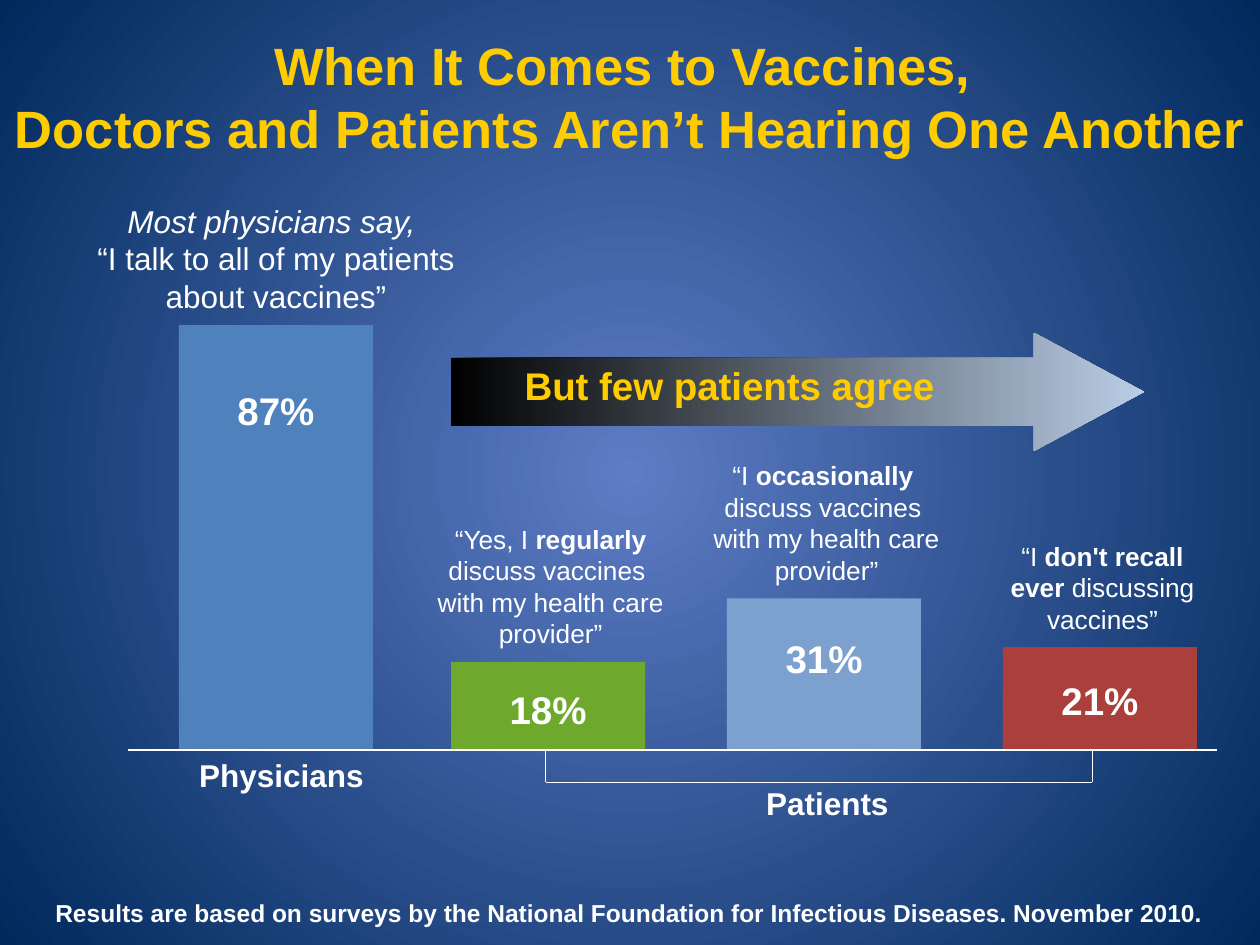
import pptx
import pptx.dml.color
import pptx.enum.shapes
import pptx.enum.text
import pptx.oxml.ns
import pptx.oxml.xmlchemy
import pptx.util
from pptx.util import Inches

COLORS = {
    "glow": "5E7CC5",
    "navy": "00295C",
    "gold": "FFCC00",
    "white": "FFFFFF",
    "black": "000000",
    "ice": "B9CDE5",
    "physicians": "4F81BD",
    "regularly": "6EA92D",
    "occasionally": "7CA1CE",
    "never": "AA3F3C",
}
ALIGN = pptx.enum.text.PP_ALIGN
SHAPES = pptx.enum.shapes.MSO_SHAPE
BAR_WIDTH = 1.54
BAR_PITCH = 2.19
INCHES_PER_PERCENT = 3.37 / 87


def rgb(name):
    return pptx.dml.color.RGBColor.from_string(COLORS[name])


def apply_format(target, values):
    for attribute, value in values.items():
        setattr(target, attribute, value)


def add_text(slide, box, lines, size, color="white", align=ALIGN.CENTER, frame_format=None, **font_format):
    frame = slide.shapes.add_textbox(*map(Inches, box)).text_frame
    apply_format(frame, {"word_wrap": True, **(frame_format or {})})
    paragraph = frame.paragraphs[0]
    paragraph.alignment = align
    for number, line in enumerate(lines):
        if number:
            paragraph.add_line_break()
        for piece in line:
            words, emphasis = piece if isinstance(piece, tuple) else (piece, {})
            run = paragraph.add_run()
            run.text = words
            apply_format(run.font, {"name": "Arial", "size": pptx.util.Pt(size), **font_format, **emphasis})
            run.font.color.rgb = rgb(color)


def add_block(slide, kind, box):
    block = slide.shapes.add_shape(kind, *map(Inches, box))
    block.shadow.inherit = False
    block.line.fill.background()
    return block


def add_rule(slide, start, end, weight=0.75):
    rule = slide.shapes.add_connector(
        pptx.enum.shapes.MSO_CONNECTOR.STRAIGHT, *map(Inches, start + end))
    rule.line.color.rgb = rgb("white")
    rule.line.width = pptx.util.Pt(weight)
    rule._element.spPr.append(pptx.oxml.xmlchemy.OxmlElement("a:effectLst"))


def set_gradient(fill, names):
    fill.gradient()
    for stop, name in zip(fill.gradient_stops, names):
        stop.color.rgb = rgb(name)


def paint_background(slide):
    set_gradient(slide.background.fill, ("glow", "navy"))
    gradient = slide.element.find(".//" + pptx.oxml.ns.qn("a:gradFill"))
    gradient.remove(gradient.find(pptx.oxml.ns.qn("a:lin")))
    circle = pptx.oxml.xmlchemy.OxmlElement("a:path")
    circle.set("path", "circle")
    center = pptx.oxml.xmlchemy.OxmlElement("a:fillToRect")
    for side in "ltrb":
        center.set(side, "50000")
    circle.append(center)
    gradient.append(circle)


def add_title(slide, box):
    add_text(slide, box, [["When It Comes to Vaccines, "],
                          ["Doctors and Patients Aren’t Hearing One Another"]],
             30, "gold", bold=True)


def add_bar(slide, left, baseline, percent, color, label_drop):
    height = percent * INCHES_PER_PERCENT
    top = baseline - height
    bar = add_block(slide, SHAPES.RECTANGLE, (left, top, BAR_WIDTH, height))
    bar.fill.solid()
    bar.fill.fore_color.rgb = rgb(color)
    add_text(slide, (left, top + label_drop, BAR_WIDTH, 0.47), [[f"{percent}%"]], 22, bold=True)
    return top


def add_group_name(slide, box, name):
    margins = {f"margin_{side}": 0 for side in ("left", "top", "right", "bottom")}
    add_text(slide, box, [[name]], 18, align=ALIGN.LEFT,
             frame_format={**margins, "word_wrap": False}, bold=True)


def add_physicians(slide, left, baseline):
    top = add_bar(slide, left, baseline, 87, "physicians", 0.44)
    add_text(slide, (left - 0.98, top - 1.03, 3.5, 1.01),
             [[("Most physicians say, ", {"italic": True})],
              ["“I talk to all of my patients about vaccines”"]], 18)
    add_group_name(slide, (left + 0.16, baseline + 0.05, 1.32, 0.3), "Physicians")


def add_patients(slide, left, baseline):
    strong = {"bold": True}
    answers = [
        (18, "regularly", 0.14, 2.25, 1.11,
         [["“Yes, I ", ("regularly", strong), " discuss vaccines "],
          ["with my health care provider”"]]),
        (31, "occasionally", 0.24, 2.42, 1.11,
         [["“I ", ("occasionally ", strong)], ["discuss vaccines "],
          ["with my health care provider”"]]),
        (21, "never", 0.19, 1.83, 0.86,
         [["“I ", ("don't recall ever ", strong), "discussing vaccines”"]]),
    ]
    for number, (percent, color, drop, width, height, quote) in enumerate(answers):
        bar_left = left + number * BAR_PITCH
        top = add_bar(slide, bar_left, baseline, percent, color, drop)
        quote_left = bar_left + (BAR_WIDTH - width) / 2 + 0.02
        add_text(slide, (quote_left, top - 0.04 - height, width, height), quote, 15)

    bracket_left, bracket_right, bracket_bottom = left + 0.75, left + 5.09, baseline + 0.26
    for side in (bracket_left, bracket_right):
        add_rule(slide, (side, baseline), (side, bracket_bottom))
    add_rule(slide, (bracket_left, bracket_bottom), (bracket_right, bracket_bottom))
    add_group_name(slide, (left + 2.5, baseline + 0.27, 0.98, 0.23), "Patients")


def add_arrow(slide, box):
    arrow = add_block(slide, SHAPES.RIGHT_ARROW, box)
    arrow.adjustments[0] = 0.575
    arrow.adjustments[1] = 0.93
    set_gradient(arrow.fill, ("black", "ice"))
    arrow.fill.gradient_angle = 0
    left, top, _, height = box
    add_text(slide, (left + 0.17, top + height / 5, 4.08, 0.47),
             [["But few patients agree"]], 22, "gold", bold=True)


def add_chart_area(slide, left, baseline, width):
    add_physicians(slide, left + 0.4, baseline)
    add_patients(slide, left + 2.56, baseline)
    add_rule(slide, (left, baseline), (left + width, baseline), 1)


def add_footer(slide, box):
    add_text(slide, box,
             [["Results are based on surveys by the National Foundation for Infectious Diseases. November 2010."]],
             14, align=ALIGN.LEFT, bold=True)


def main():
    deck = pptx.Presentation()
    apply_format(deck, {"slide_width": Inches(10), "slide_height": Inches(7.5)})
    slide = deck.slides.add_slide(deck.slide_layouts[6])
    paint_background(slide)
    add_title(slide, (0, 0.21, 10, 1.11))
    add_arrow(slide, (3.58, 2.64, 5.5, 0.94))
    add_chart_area(slide, 1.02, 5.95, 8.64)
    add_footer(slide, (0.34, 7.08, 9.32, 0.34))
    deck.save("out.pptx")


if __name__ == "__main__":
    main()
